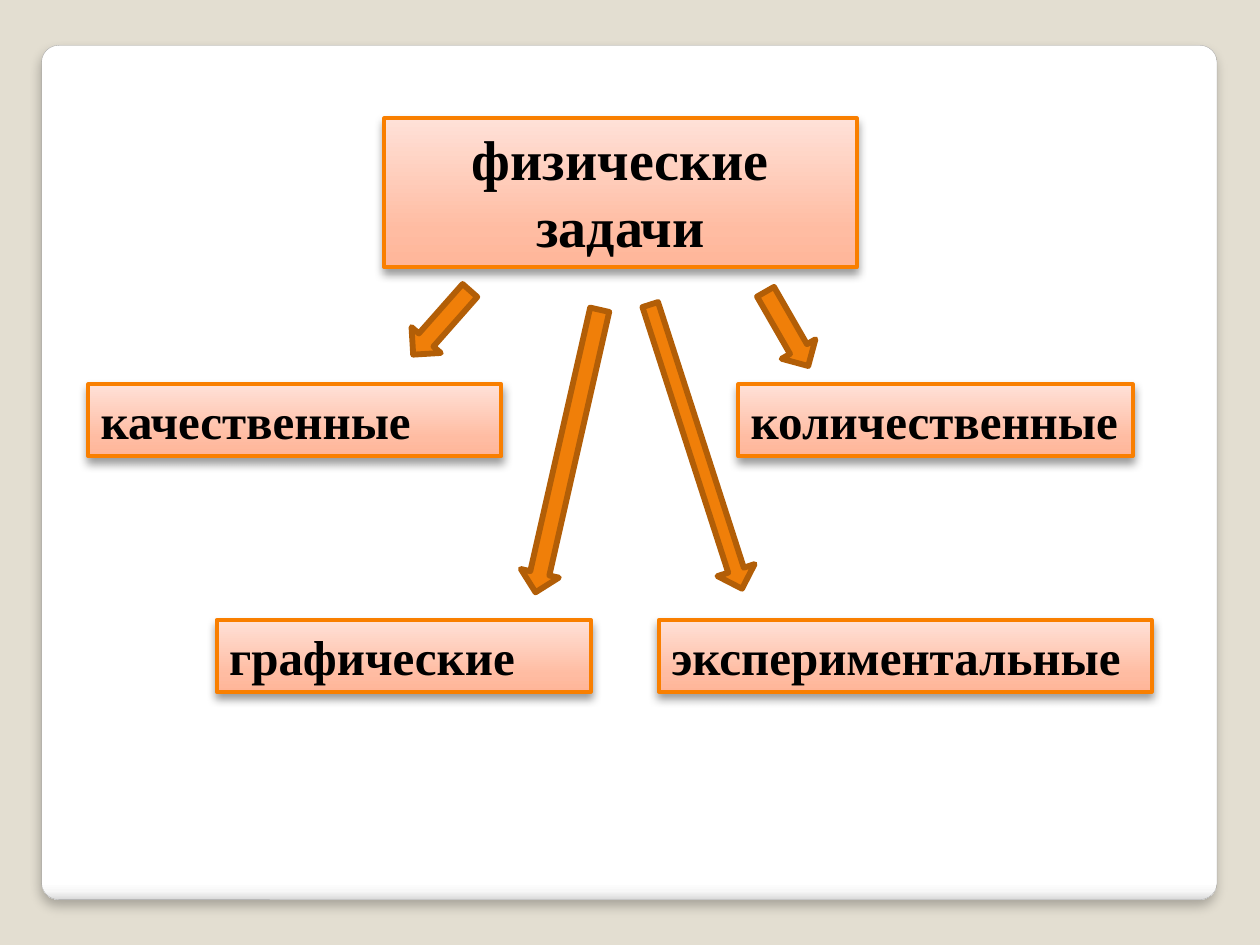
from dataclasses import dataclass

import lxml.etree
import pptx
import pptx.dml.color
import pptx.enum.shapes
import pptx.enum.text
import pptx.oxml.ns
import pptx.util

SHAPE = pptx.enum.shapes.MSO_SHAPE
ALIGN = pptx.enum.text.PP_ALIGN
COLUMNS, ROWS = 40, 30
CELL = pptx.util.Inches(0.25)

# Branch labels share one height and sit in two tiers.
LABEL_HEIGHT = 2.28
UPPER_TIER, LOWER_TIER = 12.2, 19.68
ARROW_WIDTH = 1.24

LABEL_STOPS = [(0, "FFB598"), (25, "FFBCA2"), (100, "FFE1D8")]
PANEL_STOPS = [(0, "FFFFFF"), (98, "FFFFFF"), (99, "F7F7F7"), (100, "DADADA")]


@dataclass(frozen=True)
class Area:
    """Position and size in grid columns and rows."""
    column: float
    row: float
    width: float
    height: float


@dataclass(frozen=True)
class Shadow:
    opacity: int
    blur: float
    distance: float


@dataclass(frozen=True)
class Label:
    text: str
    area: Area
    size: int = 28
    align: ALIGN = ALIGN.LEFT


@dataclass(frozen=True)
class Arrow:
    column: float
    row: float
    length: float
    rotation: float
    shaft: float = 0.5


LABELS = [
    Label("качественные", Area(2.8, UPPER_TIER, 13.12, LABEL_HEIGHT)),
    Label("количественные", Area(23.44, UPPER_TIER, 12.52, LABEL_HEIGHT)),
    Label("графические", Area(6.88, LOWER_TIER, 11.88, LABEL_HEIGHT)),
    Label("экспериментальные", Area(20.92, LOWER_TIER, 15.64, LABEL_HEIGHT)),
    Label("физические задачи", Area(12.2, 3.76, 15, 4.72), 32, ALIGN.CENTER),
]
ARROWS = [
    Arrow(24.36, 9.08, 2.72, 330.1),
    Arrow(13.4, 8.88, 2.72, 41.5),
    Arrow(21.48, 9.44, 9.48, 342.1, 0.42),
    Arrow(17.4, 9.72, 9.2, 12.8),
]


def rgb(value: str) -> pptx.dml.color.RGBColor:
    return pptx.dml.color.RGBColor.from_string(value)


def add_child(parent, tag: str, **attributes):
    child = lxml.etree.SubElement(parent, pptx.oxml.ns.qn(tag))
    for name, value in attributes.items():
        child.set(name, str(value))
    return child


def add_outline(slide, kind, area: Area, line_color: str, line_width: float):
    """Add a preset shape on the grid, without shadow and with the given line."""
    shape = slide.shapes.add_shape(
        kind, *(round(cells * CELL) for cells in
                (area.column, area.row, area.width, area.height)))
    shape.shadow.inherit = False
    shape.line.color.rgb = rgb(line_color)
    shape.line.width = pptx.util.Pt(line_width)
    return shape


def fill_gradient(shape, stops: list[tuple[int, str]], angle: int) -> None:
    """Fill with the stops; angle is counter-clockwise from left to right."""
    shape.fill.gradient()
    shape.fill.gradient_angle = angle
    stop_list = shape.element.spPr.find(".//" + pptx.oxml.ns.qn("a:gsLst"))
    for old_stop in list(stop_list):
        stop_list.remove(old_stop)
    for percent, color in stops:
        stop = add_child(stop_list, "a:gs", pos=percent * 1000)
        add_child(stop, "a:srgbClr", val=color)


def cast_shadow(shape, shadow: Shadow) -> None:
    effects = shape.element.spPr.find(pptx.oxml.ns.qn("a:effectLst"))
    outer = add_child(effects, "a:outerShdw",
                      blurRad=pptx.util.Pt(shadow.blur),
                      dist=pptx.util.Pt(shadow.distance),
                      dir=90 * 60000, algn="ctr", rotWithShape=0)
    color = add_child(outer, "a:srgbClr", val="000000")
    add_child(color, "a:alpha", val=shadow.opacity * 1000)


def draw_panel(slide) -> None:
    panel = add_outline(slide, SHAPE.ROUNDED_RECTANGLE,
                        Area(1.32, 1.44, 37.32, 27.12), "A4A4A4", 0.16)
    panel.adjustments[0] = 0.02
    fill_gradient(panel, PANEL_STOPS, 270)
    cast_shadow(panel, Shadow(25, 6, 4))


def draw_label(slide, label: Label) -> None:
    box = add_outline(slide, SHAPE.RECTANGLE, label.area, "F97F00", 2.25)
    fill_gradient(box, LABEL_STOPS, 90)
    cast_shadow(box, Shadow(40, 5.2, 3))
    frame = box.text_frame
    frame.word_wrap = True
    frame.auto_size = pptx.enum.text.MSO_AUTO_SIZE.SHAPE_TO_FIT_TEXT
    frame.vertical_anchor = pptx.enum.text.MSO_ANCHOR.TOP
    paragraph = frame.paragraphs[0]
    paragraph.alignment = label.align
    run = paragraph.add_run()
    run.text = label.text
    run.font.name = "Times New Roman"
    run.font.size = pptx.util.Pt(label.size)
    run.font.bold = True
    run.font.color.rgb = rgb("000000")


def draw_arrow(slide, arrow: Arrow) -> None:
    area = Area(arrow.column, arrow.row, ARROW_WIDTH, arrow.length)
    pointer = add_outline(slide, SHAPE.DOWN_ARROW, area, "B25E07", 3.35)
    pointer.adjustments[0] = arrow.shaft
    pointer.rotation = arrow.rotation
    pointer.fill.solid()
    pointer.fill.fore_color.rgb = rgb("F07F09")


def main() -> None:
    deck = pptx.Presentation()
    deck.slide_width = COLUMNS * CELL
    deck.slide_height = ROWS * CELL
    slide = deck.slides.add_slide(deck.slide_layouts[6])
    slide.background.fill.solid()
    slide.background.fill.fore_color.rgb = rgb("E3DED1")
    draw_panel(slide)
    for label in LABELS:
        draw_label(slide, label)
    for arrow in ARROWS:
        draw_arrow(slide, arrow)
    deck.save("out.pptx")


if __name__ == "__main__":
    main()
